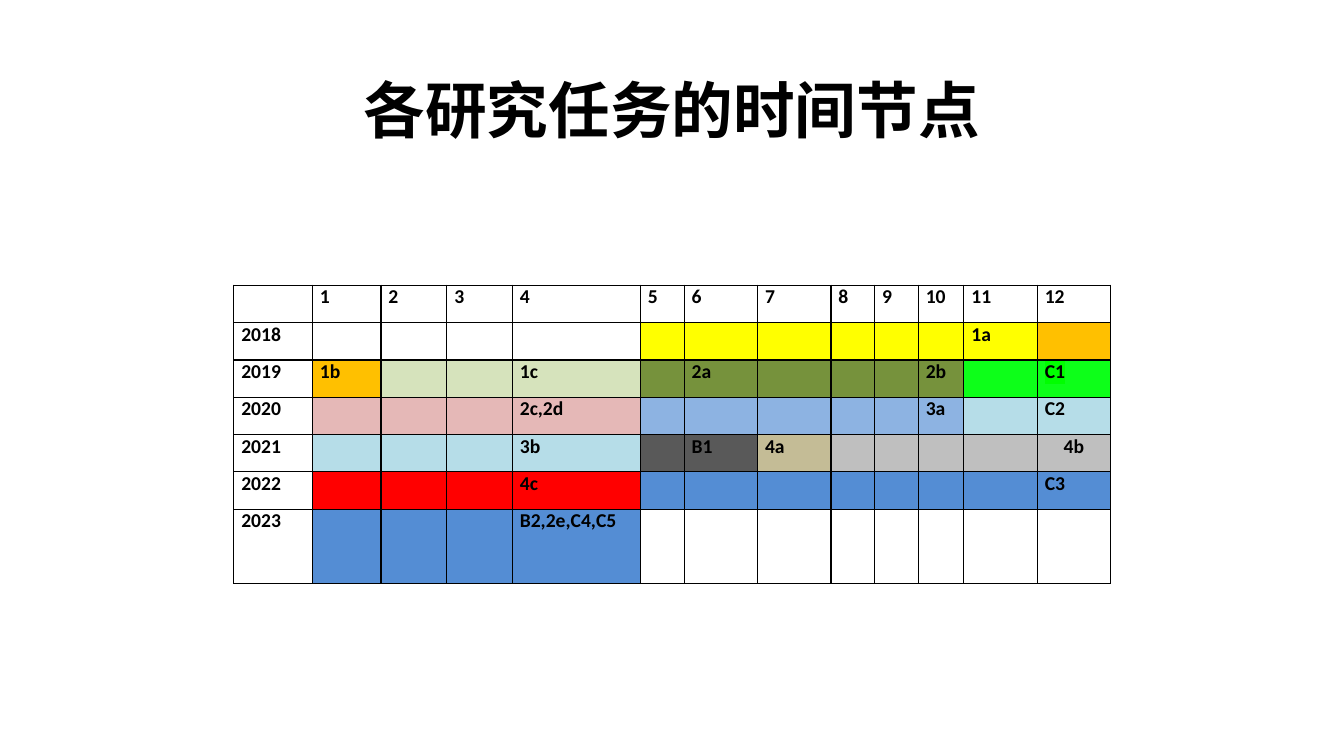
from dataclasses import dataclass

from lxml import etree
from pptx import Presentation
from pptx import util as u
from pptx.dml import color
from pptx.enum import text
from pptx.oxml import ns

FONT = "Calibri"
COLORS = {
    "black": "000000", "white": "FFFFFF", "yellow": "FFFF00", "orange": "FFC000",
    "pale green": "D6E3BC", "olive": "76923C", "green": "0DFF19",
    "highlight": "00FF00", "pink": "E5B8B7", "light blue": "8DB3E2",
    "aqua": "B6DDE8", "dark gray": "595959", "tan": "C4BC96",
    "gray": "BFBFBF", "red": "FF0000", "blue": "548DD4",
}
COLUMN_WIDTHS = [1.98, 1.73, 1.66, 1.65, 3.23, 1.1, 1.85, 1.85, 1.1, 1.1, 1.15, 1.85, 1.85]
ROW_HEIGHTS = [0.94] * 6 + [1.88]


@dataclass(frozen=True)
class Task:
    """A run of coloured months, with labels placed by month."""
    year: int
    first: int
    last: int
    fill: str
    labels: dict[int, str]


TASKS = [
    Task(2018, 5, 11, "yellow", {11: "1a"}),
    Task(2018, 12, 12, "orange", {}),
    Task(2019, 1, 1, "orange", {1: "1b"}),
    Task(2019, 2, 4, "pale green", {4: "1c"}),
    Task(2019, 5, 10, "olive", {6: "2a", 10: "2b"}),
    Task(2019, 11, 12, "green", {12: "C1"}),
    Task(2020, 1, 4, "pink", {4: "2c,2d"}),
    Task(2020, 5, 10, "light blue", {10: "3a"}),
    Task(2020, 11, 12, "aqua", {12: "C2"}),
    Task(2021, 1, 4, "aqua", {4: "3b"}),
    Task(2021, 5, 6, "dark gray", {6: "B1"}),
    Task(2021, 7, 7, "tan", {7: "4a"}),
    Task(2021, 8, 12, "gray", {12: "4b"}),
    Task(2022, 1, 4, "red", {4: "4c"}),
    Task(2022, 5, 12, "blue", {12: "C3"}),
    Task(2023, 1, 4, "blue", {4: "B2,2e,C4,C5"}),
]


def rgb(name: str) -> color.RGBColor:
    return color.RGBColor.from_string(COLORS[name])


def format_text(paragraph, size: float, alignment) -> None:
    paragraph.alignment = alignment
    for run in paragraph.runs:
        run.font.name = FONT
        run.font.size = u.Pt(size)
        run.font.bold = True
        run.font.color.rgb = rgb("black")


def add_solid_color(parent, name: str) -> None:
    fill = etree.SubElement(parent, ns.qn("a:solidFill"))
    etree.SubElement(fill, ns.qn("a:srgbClr"), val=COLORS[name])


def add_borders(cell) -> None:
    properties = cell._tc.get_or_add_tcPr()
    for side in ("lnL", "lnR", "lnT", "lnB"):
        line = etree.SubElement(properties, ns.qn(f"a:{side}"), w=str(u.Pt(1)))
        add_solid_color(line, "black")


def highlight(run, name: str) -> None:
    mark = etree.Element(ns.qn("a:highlight"))
    etree.SubElement(mark, ns.qn("a:srgbClr"), val=COLORS[name])
    run.font._element.find(ns.qn("a:solidFill")).addnext(mark)


def draw_cell(cell, label: str, fill: str) -> None:
    add_borders(cell)
    cell.fill.solid()
    cell.fill.fore_color.rgb = rgb(fill)
    cell.margin_left = cell.margin_right = u.Cm(0.19)
    cell.margin_top = cell.margin_bottom = 0
    if label:
        cell.text_frame.text = label
        alignment = text.PP_ALIGN.CENTER if label == "4b" else text.PP_ALIGN.JUSTIFY
        paragraph = cell.text_frame.paragraphs[0]
        format_text(paragraph, 14, alignment)
        if label == "C1":
            highlight(paragraph.runs[0], "highlight")


def draw_title(slide, wording: str) -> None:
    title = slide.shapes.title
    title.left, title.top = u.Cm(2.33), u.Cm(1.01)
    title.width, title.height = u.Cm(29.21), u.Cm(3.68)
    title.text_frame.text = wording
    title.text_frame.vertical_anchor = text.MSO_ANCHOR.MIDDLE
    paragraph = title.text_frame.paragraphs[0]
    paragraph.line_spacing = 0.9
    format_text(paragraph, 44, text.PP_ALIGN.CENTER)


def draw_schedule(slide) -> None:
    frame = slide.shapes.add_table(
        len(ROW_HEIGHTS), len(COLUMN_WIDTHS), u.Cm(5.89), u.Cm(7.19),
        u.Cm(sum(COLUMN_WIDTHS)), u.Cm(sum(ROW_HEIGHTS)))
    table = frame.table
    table.first_row = table.horz_banding = False
    for column, width in zip(table.columns, COLUMN_WIDTHS):
        column.width = u.Cm(width)
    for row, height in zip(table.rows, ROW_HEIGHTS):
        row.height = u.Cm(height)

    # Months across, years down, then the tasks
    labels = {(0, month): str(month) for month in range(1, 13)}
    labels |= {(year - 2017, 0): str(year) for year in range(2018, 2024)}
    fills = {}
    for task in TASKS:
        row_index = task.year - 2017
        for month in range(task.first, task.last + 1):
            fills[row_index, month] = task.fill
            labels[row_index, month] = task.labels.get(month, "")

    for row_index in range(len(ROW_HEIGHTS)):
        for month in range(len(COLUMN_WIDTHS)):
            place = row_index, month
            draw_cell(table.cell(*place), labels.get(place, ""), fills.get(place, "white"))


def main() -> None:
    presentation = Presentation()
    presentation.slide_width, presentation.slide_height = u.Cm(33.87), u.Cm(19.05)
    slide = presentation.slides.add_slide(presentation.slide_layouts[5])
    draw_title(slide, "各研究任务的时间节点")
    draw_schedule(slide)
    presentation.save("out.pptx")


if __name__ == "__main__":
    main()
